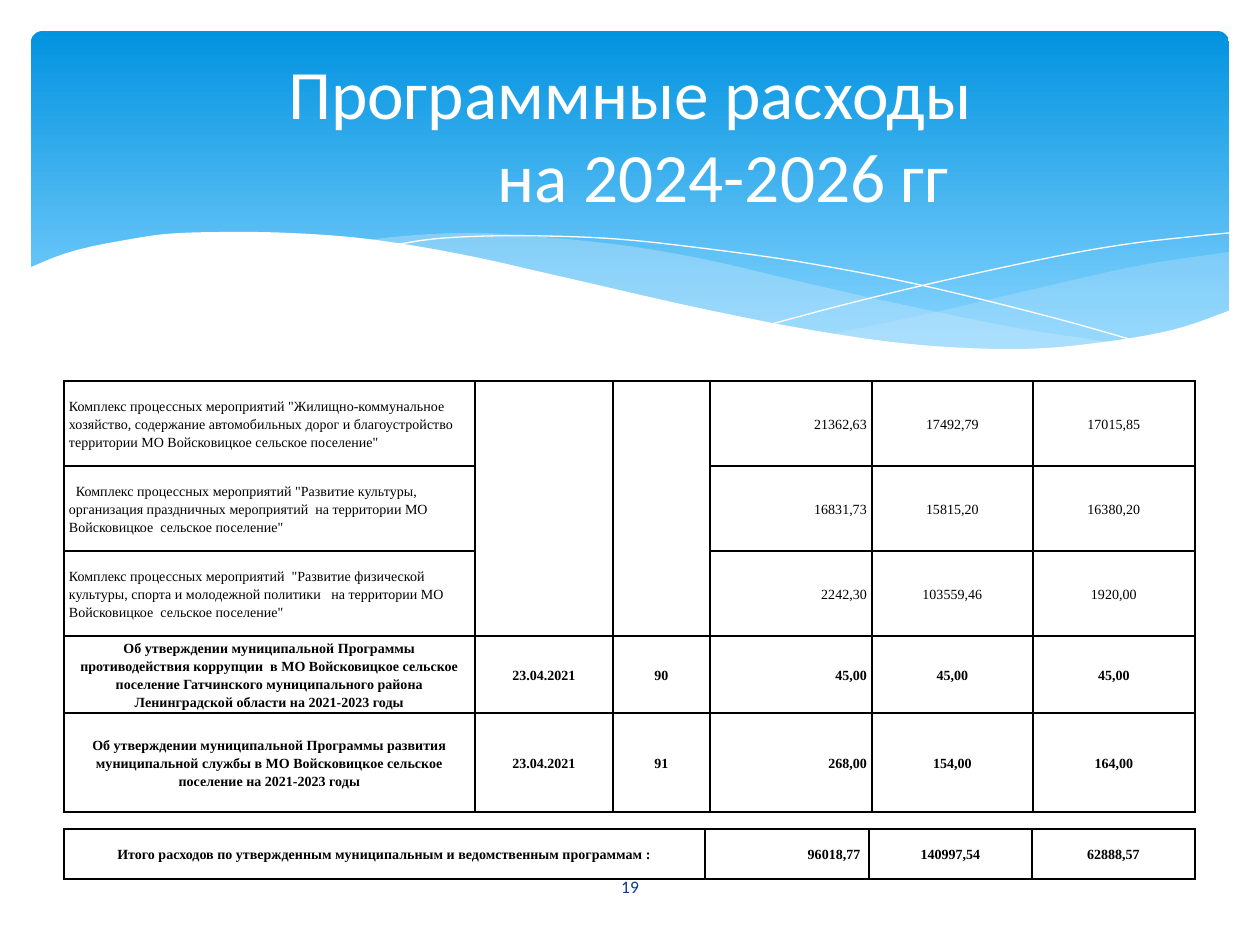
from dataclasses import dataclass

from lxml.etree import SubElement
from pptx import Presentation
from pptx.dml.color import RGBColor
from pptx.enum.shapes import MSO_SHAPE
from pptx.enum.text import MSO_ANCHOR, MSO_AUTO_SIZE, PP_ALIGN
from pptx.oxml.ns import qn
from pptx.util import Emu, Pt


@dataclass(frozen=True)
class Theme:
    sky_top: str = "0293E0"
    sky_bottom: str = "83D3FE"
    wave: str = "C6E7FC"
    white: str = "FFFFFF"
    black: str = "000000"
    navy: str = "073E87"
    head_font: str = "Calibri"
    table_font: str = "Times New Roman"
    title_size: float = 39.6
    number_size: float = 10
    table_size: float = 8


THEME = Theme()
LEFT, CENTER, RIGHT = PP_ALIGN.LEFT, PP_ALIGN.CENTER, PP_ALIGN.RIGHT

# Wave outlines as knots in px, relative to the banner's corner
RIGHT_WAVE = (
    [(1198, 221), (1111, 234), (1016, 255), (918, 278), (802, 303)],
    [(802, 303), (875, 312), (953, 318), (1021, 318), (1079, 313), (1129, 303),
     (1198, 280)],
)
MIDDLE_WAVE = (
    [(1094, 313), (986, 297), (859, 271), (762, 249), (686, 231), (617, 218),
     (555, 210), (498, 205), (448, 202), (402, 203), (363, 206), (329, 210)],
    [(329, 210), (400, 220), (478, 235), (535, 249), (637, 271), (726, 290),
     (807, 304), (879, 314), (941, 318), (999, 319), (1049, 318), (1094, 313)],
)
FALLING_LINE = [(358, 215), (402, 208), (456, 205), (514, 205), (586, 208),
                (670, 217), (770, 231), (885, 253), (1016, 285), (1112, 312)]
RISING_LINE = [(741, 293), (816, 273), (911, 250), (1022, 226), (1097, 213),
               (1167, 205), (1198, 202)]
PAGE_EDGE = [(1200, 279), (1141, 299), (1065, 312), (988, 318), (890, 314),
             (786, 300), (668, 277), (532, 246), (429, 223), (337, 208),
             (259, 202), (192, 201), (135, 203), (89, 210), (54, 217),
             (27, 225), (-2, 237)]

PROGRAMS = [
    ('Комплекс процессных мероприятий "Жилищно-коммунальное хозяйство, содержание '
     'автомобильных дорог и благоустройство территории МО Войсковицкое сельское поселение"',
     "", "", "21362,63", "17492,79", "17015,85"),
    ('  Комплекс процессных мероприятий "Развитие культуры, организация праздничных '
     'мероприятий  на территории МО Войсковицкое  сельское поселение"',
     "", "", "16831,73", "15815,20", "16380,20"),
    ('Комплекс процессных мероприятий  "Развитие физической культуры, спорта и '
     'молодежной политики   на территории МО Войсковицкое  сельское поселение"',
     "", "", "2242,30", "103559,46", "1920,00"),
    ("Об утверждении муниципальной Программы противодействия коррупции  в МО "
     "Войсковицкое сельское поселение Гатчинского муниципального района "
     "Ленинградской области на 2021-2023 годы",
     "23.04.2021", "90", "45,00", "45,00", "45,00"),
    ("Об утверждении муниципальной Программы развития муниципальной службы в МО "
     "Войсковицкое сельское поселение на 2021-2023 годы",
     "23.04.2021", "91", "268,00", "154,00", "164,00"),
]
TOTALS = [("Итого расходов по утвержденным муниципальным и ведомственным программам :",
           "96018,77 ", "140997,54", "62888,57")]


def px(n):
    return Emu(round(n * 914400 / 126))


def rgb(color):
    return RGBColor.from_string(color)


def set_font(p, name, size, color, bold=False):
    p.font.name, p.font.size, p.font.bold = name, Pt(size), bold
    p.font.color.rgb = rgb(color)


def curve(knots, steps=6):
    """Points of a Catmull-Rom curve through the knots."""
    ends = [knots[0], *knots, knots[-1]]
    points = [knots[0]]
    for a, b, c, d in zip(ends, ends[1:], ends[2:], ends[3:]):
        for t in (i / steps for i in range(1, steps + 1)):
            points.append(tuple(
                (2 * q + (r - p) * t + (2 * p - 5 * q + 4 * r - s) * t ** 2
                 + (3 * q - p - 3 * r + s) * t ** 3) / 2
                for p, q, r, s in zip(a, b, c, d)))
    return points


def add_outline(slide, left, top, points, fill=None, opacity=100):
    """A filled area, or a hairline when no fill is given."""
    pts = [(px(left + x), px(top + y)) for x, y in points]
    builder = slide.shapes.build_freeform(*pts[0], scale=1.0)
    builder.add_line_segments(pts[1:], close=fill is not None)
    sp = builder.convert_to_shape()
    sp.shadow.inherit = False
    if fill is None:
        sp.fill.background()
        sp.line.color.rgb = rgb(THEME.white)
        sp.line.width = 0
        return
    sp.line.fill.background()
    sp.fill.solid()
    sp.fill.fore_color.rgb = rgb(fill)
    if opacity < 100:
        color = sp.fill._xPr.find(".//" + qn("a:srgbClr"))
        SubElement(color, qn("a:alpha"), val=str(opacity * 1000))


def add_banner(slide, left, top, width, height):
    # Sky
    sp = slide.shapes.add_shape(MSO_SHAPE.ROUNDED_RECTANGLE,
                                px(left), px(top), px(width), px(height))
    sp.adjustments[0] = 0.034
    sp.shadow.inherit = False
    sp.line.fill.background()
    sp.fill.gradient()
    sp.fill.gradient_angle = 270
    stops = ((0, THEME.sky_top), (0.9, THEME.sky_bottom))
    for stop, (position, color) in zip(sp.fill.gradient_stops, stops):
        stop.position = position
        stop.color.rgb = rgb(color)
    # Waves
    for (upper, lower), opacity in ((RIGHT_WAVE, 29), (MIDDLE_WAVE, 40)):
        add_outline(slide, left, top, curve(upper) + curve(lower), THEME.wave, opacity)
    for knots in (FALLING_LINE, RISING_LINE):
        add_outline(slide, left, top, curve(knots))
    # White page edge below the waves
    edge = curve(PAGE_EDGE) + [(-2, height + 44), (width + 2, height + 44)]
    add_outline(slide, left, top, edge, THEME.white)


def place_title(slide, left, top, width, height, lines, indent):
    title = slide.shapes.title
    title.left, title.top, title.width, title.height = map(px, (left, top, width, height))
    slide.shapes._spTree.append(title._element)  # bring above the banner
    tf = title.text_frame
    tf.text = "\n".join(lines)
    tf.auto_size = MSO_AUTO_SIZE.NONE
    tf.vertical_anchor = MSO_ANCHOR.MIDDLE
    for p in tf.paragraphs:
        p.alignment = CENTER
        set_font(p, THEME.head_font, THEME.title_size, THEME.white)
    tf.paragraphs[-1]._p.get_or_add_pPr().set("marL", str(px(indent)))


def add_page_number(slide, left, top, width, height, number):
    tf = slide.shapes.add_textbox(px(left), px(top), px(width), px(height)).text_frame
    tf.word_wrap = True
    tf.vertical_anchor = MSO_ANCHOR.MIDDLE
    p = tf.paragraphs[0]
    p.text, p.alignment = number, CENTER
    set_font(p, THEME.head_font, THEME.number_size, THEME.navy)


def format_cell(cell, text, align, bold):
    cell.text = text
    cell.vertical_anchor = MSO_ANCHOR.MIDDLE
    cell.margin_left = cell.margin_right = px(5)
    cell.margin_top = cell.margin_bottom = 0
    p = cell.text_frame.paragraphs[0]
    p.alignment, p.line_spacing = align, 1.15
    set_font(p, THEME.table_font, THEME.table_size, THEME.black, bold)
    # Borders come before the fill
    for side in ("lnL", "lnR", "lnT", "lnB"):
        ln = SubElement(cell._tc.get_or_add_tcPr(), qn("a:" + side), w=str(Pt(1)))
        SubElement(SubElement(ln, qn("a:solidFill")), qn("a:srgbClr"), val=THEME.black)
    cell.fill.solid()
    cell.fill.fore_color.rgb = rgb(THEME.white)


def add_budget_table(slide, left, top, cols, rows, data, plain_rows=0):
    """Bold rows, after plain_rows of left-aligned regular ones."""
    table = slide.shapes.add_table(len(rows), len(cols), px(left), px(top),
                                   px(sum(cols)), px(sum(rows))).table
    table.first_row = table.horz_banding = False
    for column, width in zip(table.columns, cols):
        column.width = px(width)
    for row, height in zip(table.rows, rows):
        row.height = px(height)
    first_sum = len(cols) - 3
    for i, values in enumerate(data):
        plain = i < plain_rows
        for j, text in enumerate(values):
            align = RIGHT if j == first_sum else LEFT if plain and j == 0 else CENTER
            format_cell(table.cell(i, j), text, align, not plain)
    return table


def main():
    prs = Presentation()
    prs.slide_width, prs.slide_height = px(1260), px(945)
    slide = prs.slides.add_slide(prs.slide_layouts[5])
    add_banner(slide, 31, 31, 1198, 340)
    place_title(slide, 63, 47, 1134, 173,
                ("Программные расходы", "на 2024-2026 гг"), indent=187)
    add_page_number(slide, 550, 862, 160, 50, "19")
    programs = add_budget_table(slide, 64, 381, (411, 138, 97, 162, 161, 162),
                                (85, 85, 85, 74, 99), PROGRAMS, plain_rows=3)
    for j in (1, 2):
        programs.cell(0, j).merge(programs.cell(2, j))
    add_budget_table(slide, 64, 829, (641, 164, 163, 163), (50,), TOTALS)
    prs.save("out.pptx")


if __name__ == "__main__":
    main()
